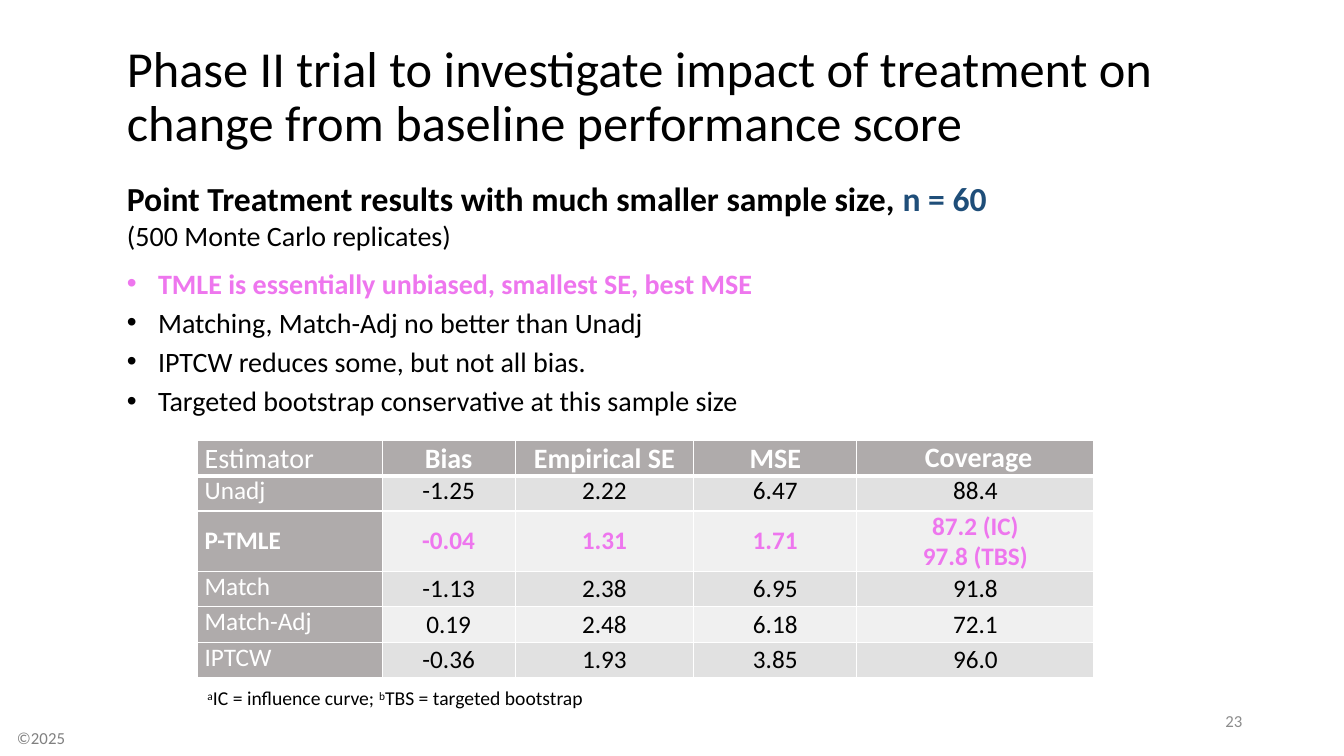
from dataclasses import dataclass
from lxml.etree import SubElement as Sub
from pptx import Presentation
from pptx.dml.color import RGBColor as Rgb
from pptx.enum.text import MSO_ANCHOR as Anchor, MSO_AUTO_SIZE as Auto, PP_ALIGN as Align
from pptx.oxml.ns import qn
from pptx.util import Emu, Pt


@dataclass(frozen=True)
class Theme:
    face: str = "Calibri"
    ink: str = "000000"
    white: str = "FFFFFF"
    blue: str = "1F4E79"
    pink: str = "EE76EE"
    head: str = "AFABAB"
    dark: str = "E1E1E1"
    light: str = "F0F0F0"
    foot: str = "808080"
    page: str = "8C8C8C"
    title: int = 36
    lead: int = 24
    body: int = 20
    cell: int = 18
    note: int = 14
    small: int = 12


T = Theme()
UNIT = 9144  # 100 px to the inch


def px(n):
    return Emu(n * UNIT)


def add_run(para, text, size, tone=T.ink, bold=False, rise=0):
    for i, line in enumerate(text.split("\n")):
        if i:
            para.add_line_break()
        if not line:
            continue
        run = para.add_run()
        run.text = line
        font = run.font
        font.name, font.size, font.bold = T.face, Pt(size), bold
        font.color.rgb = Rgb.from_string(tone)
        if rise:
            run._r.get_or_add_rPr().set("baseline", str(rise * 1000))


def add_text(slide, box, wrap=True, anchor=Anchor.TOP, grow=True):
    frame = slide.shapes.add_textbox(*map(px, box)).text_frame
    frame.word_wrap = wrap
    frame.vertical_anchor = anchor
    frame.auto_size = Auto.SHAPE_TO_FIT_TEXT if grow else Auto.NONE
    return frame


def add_title(slide, box):
    para = add_text(slide, box, anchor=Anchor.MIDDLE, grow=False).paragraphs[0]
    para.line_spacing = 0.9
    add_run(para, "Phase II trial to investigate impact of treatment on\n"
                  "change from baseline performance score", T.title)


def add_lead(slide, box):
    para = add_text(slide, box, wrap=False).paragraphs[0]
    add_run(para, "Point Treatment results with much smaller sample size, ", T.lead, bold=True)
    add_run(para, "n = 60\n", T.lead, T.blue, True)
    add_run(para, "(500 Monte Carlo replicates)", T.body)


def add_list(slide, box):
    items = ["TMLE is essentially unbiased, smallest SE, best MSE",
             "Matching, Match-Adj no better than Unadj",
             "IPTCW reduces some, but not all bias.",
             "Targeted bootstrap conservative at this sample size"]
    frame = add_text(slide, box)
    for i, item in enumerate(items):
        para = frame.add_paragraph() if i else frame.paragraphs[0]
        props = para._p.get_or_add_pPr()
        props.set("marL", str(px(31)))
        props.set("indent", str(-px(31)))
        Sub(props, qn("a:buFont"), typeface="Arial")
        Sub(props, qn("a:buChar"), char="•")
        # The first item keeps the same gap above it as the rest have between them
        para.space_before = Pt(4 if i else 0)
        add_run(para, item, T.body, T.ink if i else T.pink, not i)


def set_edges(cell, base):
    props = cell._tc.get_or_add_tcPr()
    for i, (side, width) in enumerate(zip("LRTB", (1, 1, 1, base))):
        line = props.makeelement(qn("a:ln" + side), {"w": str(Pt(width))})
        Sub(Sub(line, qn("a:solidFill")), qn("a:srgbClr"), val=T.white)
        props.insert(i, line)


def add_grid(slide, box):
    rows = [["Estimator", "Bias", "Empirical SE", "MSE", " Coverage"],
            ["Unadj", "-1.25", "2.22", "6.47", "88.4"],
            ["P-TMLE", "-0.04", "1.31", "1.71", "87.2 (IC)\n97.8 (TBS)"],
            ["Match", "-1.13", "2.38", "6.95", "91.8"],
            ["Match-Adj", "0.19", "2.48", "6.18", "72.1"],
            ["IPTCW", "-0.36", "1.93", "3.85", "96.0"]]
    best = 2
    grid = slide.shapes.add_table(len(rows), len(rows[0]), *map(px, box)).table
    for col, width in zip(grid.columns, (183, 132, 177, 162, 235)):
        col.width = px(width)
    for r, row in enumerate(rows):
        grid.rows[r].height = px(50 if r == best else 35)
        for c, text in enumerate(row):
            cell = grid.cell(r, c)
            cell.margin_left = cell.margin_right = px(7)
            cell.margin_top = cell.margin_bottom = 0
            # Header sits low, values sit in the middle, names sit high
            if r == 0:
                cell.vertical_anchor = Anchor.TOP if c == 4 else Anchor.BOTTOM
            elif r == best or (r > best and c):
                cell.vertical_anchor = Anchor.MIDDLE
            else:
                cell.vertical_anchor = Anchor.TOP
            label = r == 0 or c == 0
            fill = T.head if label else T.dark if r % 2 else T.light
            cell.fill.solid()
            cell.fill.fore_color.rgb = Rgb.from_string(fill)
            set_edges(cell, 1 if r else 3)
            para = cell.text_frame.paragraphs[0]
            para.alignment = Align.CENTER if c else Align.LEFT
            tone = T.white if label else T.pink if r == best else T.ink
            bold = r == best or (r == 0 and c > 0)
            add_run(para, text, T.cell if r else T.body, tone, bold)


def add_note(slide, box):
    para = add_text(slide, box).paragraphs[0]
    for mark, text in (("a", "IC = influence curve; "), ("b", "TBS = targeted bootstrap")):
        add_run(para, mark, T.note, rise=30)
        add_run(para, text, T.note)


def add_foot(slide, left, right):
    add_run(add_text(slide, left, wrap=False).paragraphs[0], "©2025", T.small, T.foot)
    para = add_text(slide, right, anchor=Anchor.MIDDLE, grow=False).paragraphs[0]
    para.alignment = Align.RIGHT
    add_run(para, "23", T.small, T.page)


def main():
    deck = Presentation()
    deck.slide_width, deck.slide_height = px(1333), px(750)
    slide = deck.slides.add_slide(deck.slide_layouts[6])
    add_foot(slide, (7, 717, 69, 30), (942, 695, 300, 40))
    add_lead(slide, (116, 172, 881, 84))
    add_title(slide, (116, 35, 1159, 125))
    add_list(slide, (116, 259, 930, 162))
    add_grid(slide, (196, 437, 889, 225))
    add_note(slide, (196, 676, 644, 34))
    deck.save("out.pptx")


if __name__ == "__main__":
    main()
